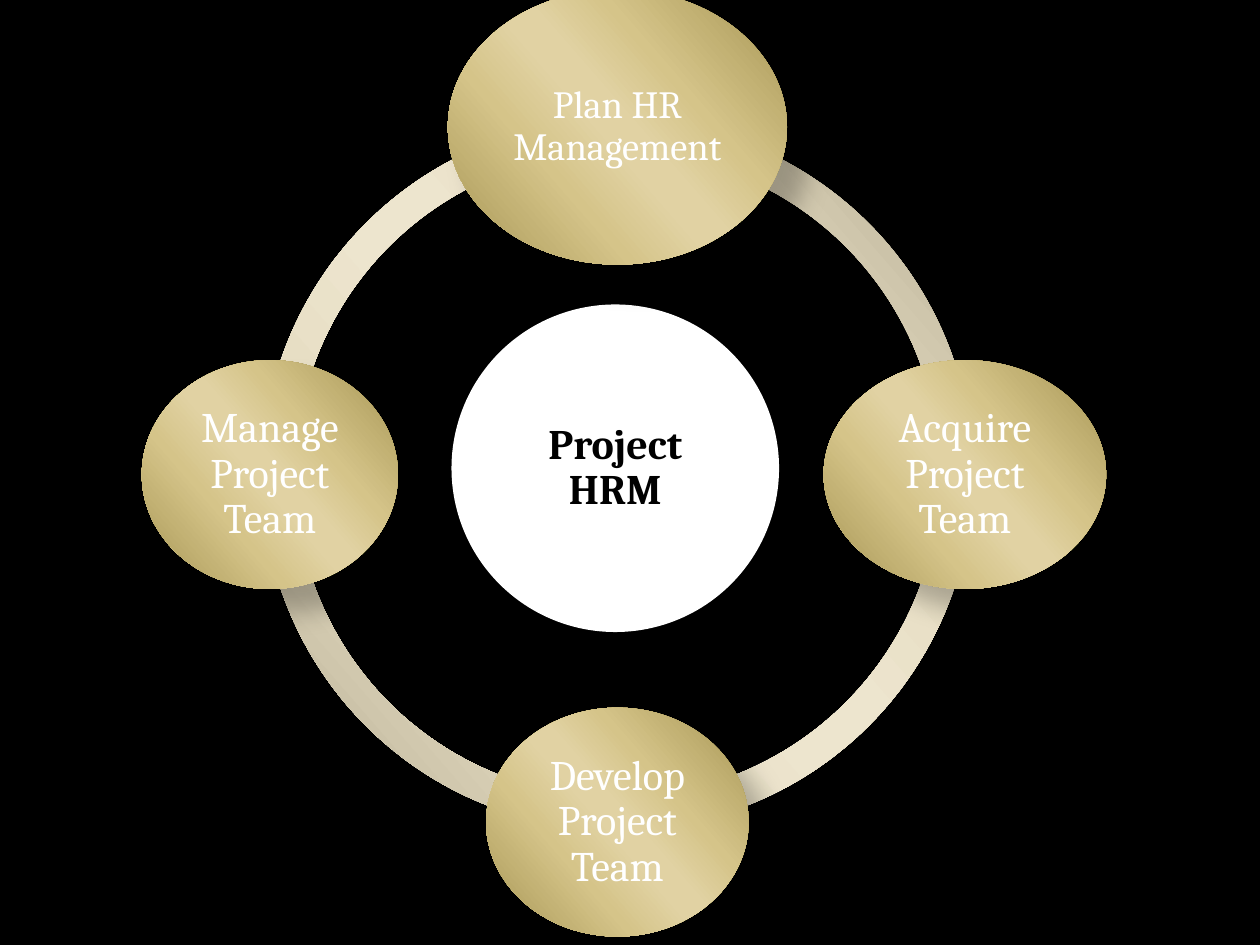
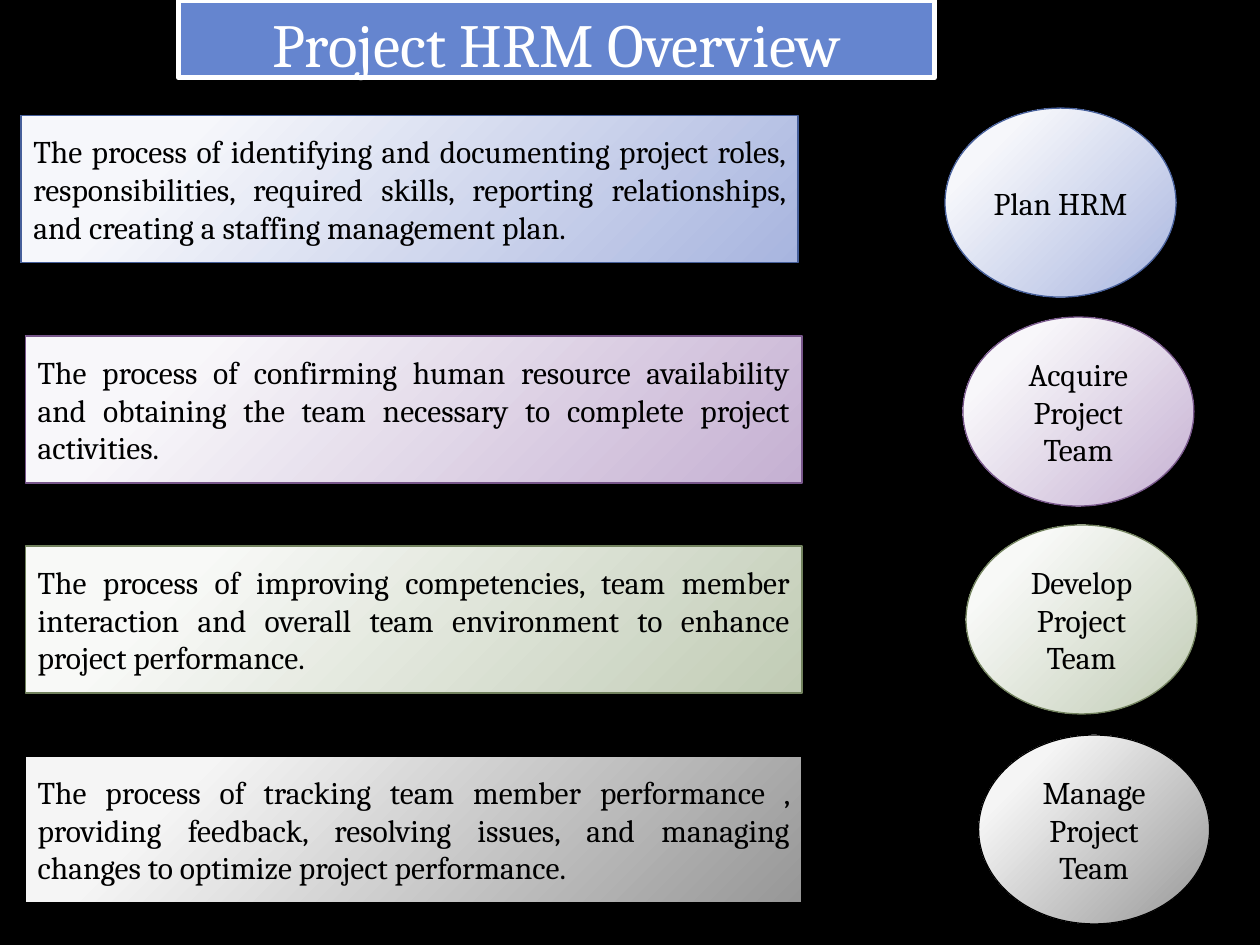
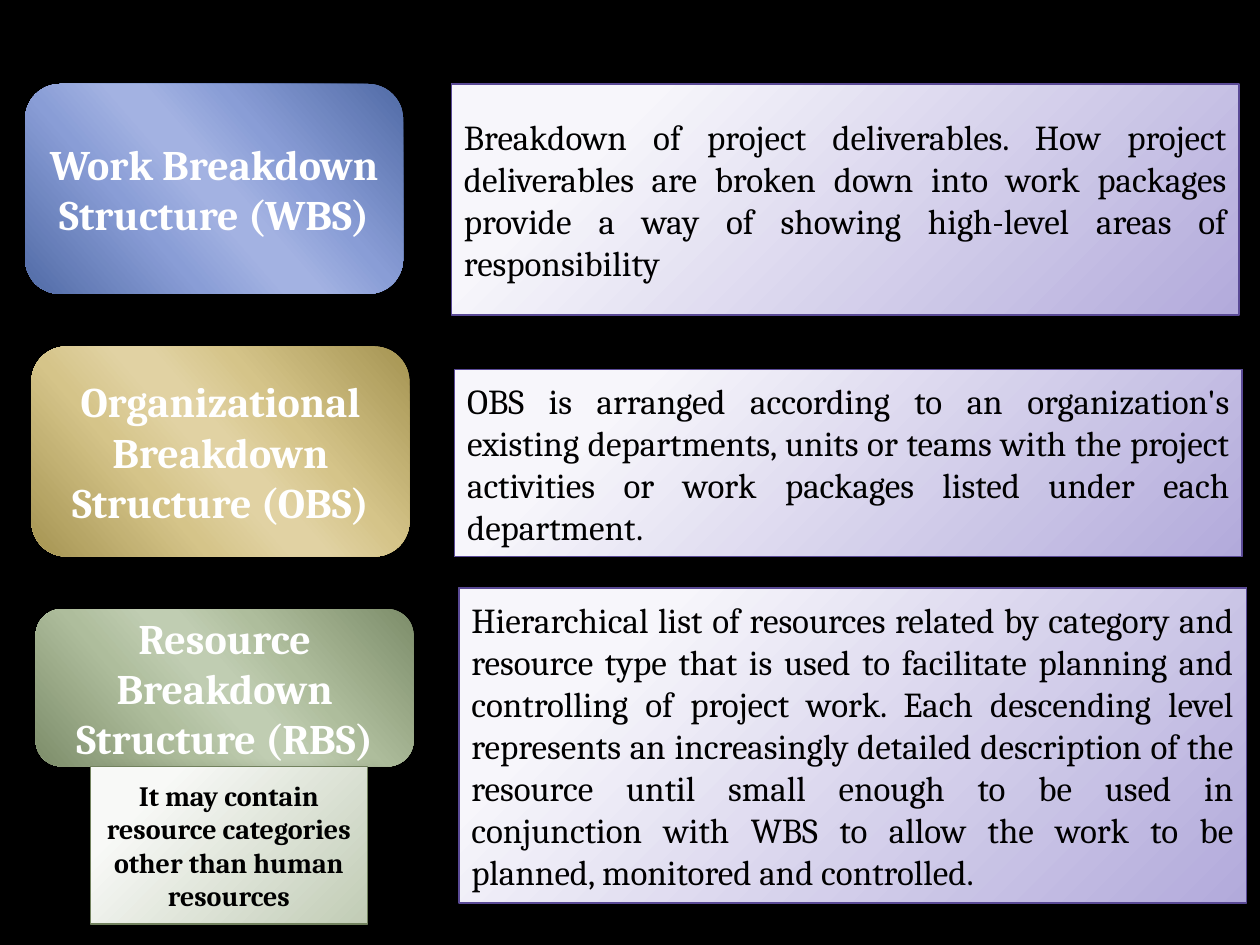
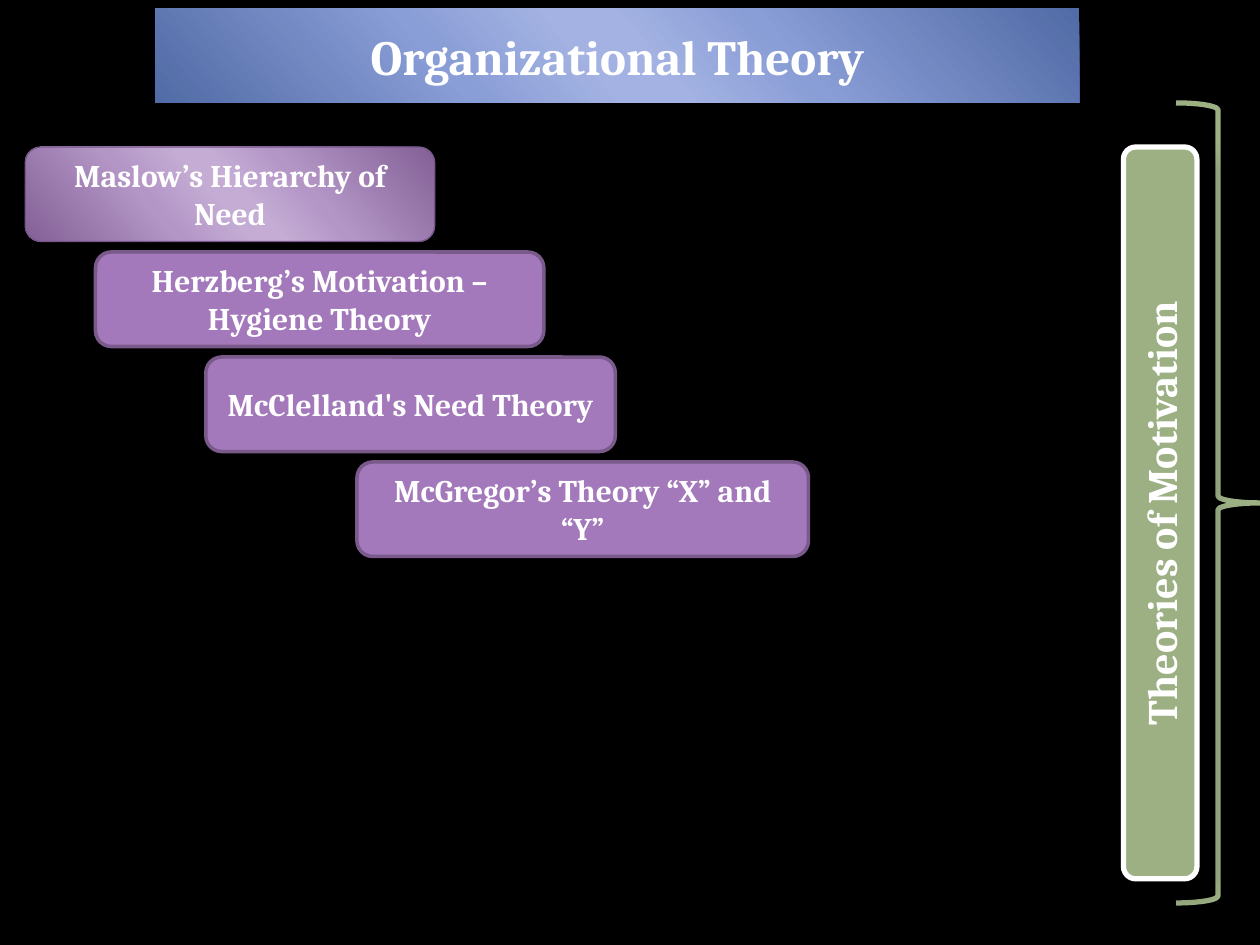
from dataclasses import dataclass
from math import cos, radians, sin, sqrt

from lxml import etree
from pptx import Presentation
from pptx import util as u
from pptx.dml import color
from pptx.enum import shapes, text
from pptx.oxml import ns

KIND = shapes.MSO_SHAPE
ALIGN = text.PP_ALIGN
ANCHOR = text.MSO_ANCHOR
COLUMNS, ROWS = 120, 90
CELL = u.Inches(10) / COLUMNS  # the grid is square


@dataclass(frozen=True)
class Sheen:
    """Diagonal band: dark edges, light centre."""
    edge: str
    middle: str
    centre: str


@dataclass(frozen=True)
class Mist:
    """Fades from the top left corner, with a thin outline."""
    light: str
    dark: str
    line: str


@dataclass(frozen=True)
class Shadow:
    alpha: float
    blur: float
    distance: float


@dataclass(frozen=True)
class Theme:
    font = "Cambria"
    ground = ink = "000000"
    paper = "FFFFFF"
    blue, purple, purple_line, green = "6585CF", "A379BB", "795A8A", "9CB084"
    gold_sheen = Sheen("A59452", "D5C489", "E1D2A3")
    ring_sheen = Sheen("B6AD93", "E7DEC4", "EDE5CE")
    blue_sheen = Sheen("516BA6", "899DD6", "A3B2E2")
    green_sheen = Sheen("7D8D6A", "AEBD9C", "C0CDB2")
    purple_sheen = Sheen("836196", "B395C6", "C4ACD4")
    blue_mist = Mist("F6F7FB", "A8B5DF", "465F9A")
    purple_mist = Mist("F8F7FA", "C5B0D2", "77568A")
    green_mist = Mist("F8F9F7", "C1CCB5", "72825E")
    grey_mist = Mist("F5F5F5", "979797", "000000")
    violet_mist = Mist("F7F6FB", "B2AADB", "5A4A96")
    deep = Shadow(26, 15, 18)
    soft = Shadow(35, 10.2, 8)
    title, banner, heading, node, body, label, note = 35, 28, 24, 22, 20, 18, 16
    hairline, border, frame = 0.75, 2, 3


THEME = Theme()


@dataclass(frozen=True)
class Box:
    """An area counted in grid columns and rows."""
    left: float
    top: float
    width: float
    height: float

    @classmethod
    def around(cls, x, y, width, height):
        return cls(x - width / 2, y - height / 2, width, height)

    def inner(self, left, top, width, height):
        return Box(self.left + left, self.top + top, width, height)

    def inscribed(self):
        share = sqrt(0.5)
        return Box.around(self.left + self.width / 2, self.top + self.height / 2,
                          self.width * share, self.height * share)

    def emu(self):
        return [round(n * CELL) for n in (self.left, self.top, self.width, self.height)]


PAGE = Box(0, 0, COLUMNS, ROWS)


# Formatting helpers
def apply(target, **values):
    for name, value in values.items():
        setattr(target, name, value)


def rgb(value):
    return color.RGBColor.from_string(value)


def node(parent, tag, **values):
    return etree.SubElement(parent, ns.qn("a:" + tag), {k: str(v) for k, v in values.items()})


def gradient(shape, fill):
    grad = node(shape._element.spPr, "gradFill", rotWithShape=1)
    if isinstance(fill, Sheen):
        stops = [(0, fill.edge), (33, fill.middle), (47, fill.centre),
                 (53, fill.centre), (68, fill.middle), (100, fill.edge)]
    else:
        stops = [(20, fill.light), (100, fill.dark)]
    stop_list = node(grad, "gsLst")
    for place, value in stops:
        node(node(stop_list, "gs", pos=place * 1000), "srgbClr", val=value)
    if isinstance(fill, Sheen):
        node(grad, "lin", ang=139 * 60000, scaled=1)
    else:
        circle = node(grad, "path", **{"path": "circle"})
        node(circle, "fillToRect", l=-15000, t=-15000, r=115000, b=115000)


def paint(shape, fill=None, line=None, weight=THEME.hairline, shadow=None):
    if isinstance(fill, (Sheen, Mist)):
        gradient(shape, fill)
    elif fill:
        shape.fill.solid()
        shape.fill.fore_color.rgb = rgb(fill)
    else:
        shape.fill.background()
    if isinstance(fill, Mist):
        line = fill.line
    if line:
        shape.line.color.rgb = rgb(line)
        shape.line.width = u.Pt(weight)
    else:
        shape.line.fill.background()
    shape.shadow.inherit = False
    if shadow:
        effects = shape._element.spPr.find(ns.qn("a:effectLst"))
        outer = node(effects, "outerShdw", blurRad=u.Pt(shadow.blur), dist=u.Pt(shadow.distance),
                     dir=45 * 60000, algn="tl", rotWithShape=0)
        node(node(outer, "srgbClr", val=THEME.ground), "alpha", val=shadow.alpha * 1000)


def write(shape, words, size, ink=THEME.paper, bold=False, align=ALIGN.CENTER,
          anchor=ANCHOR.MIDDLE, margin=None, **spacing):
    frame = shape.text_frame
    apply(frame, auto_size=text.MSO_AUTO_SIZE.NONE, word_wrap=True, vertical_anchor=anchor)
    if margin is not None:
        sides = ("left", "top", "right", "bottom")
        apply(frame, **{f"margin_{side}": u.Inches(margin) for side in sides})
    para = frame.paragraphs[0]
    apply(para, alignment=align, **spacing)
    span = para.add_run()
    span.text = words
    apply(span.font, name=THEME.font, size=u.Pt(size), bold=bold)
    span.font.color.rgb = rgb(ink)


def draw(page, kind, box, **look):
    shape = page.shapes.add_shape(kind, *box.emu())
    paint(shape, **look)
    return shape


def add_page(deck, titled=False):
    return deck.slides.add_slide(deck.slide_layouts[5 if titled else 6])


def place_title(page, box, words, size, outline, look, **style):
    title = page.shapes.title
    apply(title, **dict(zip(("left", "top", "width", "height"), box.emu())))
    node(node(title._element.spPr, "prstGeom", prst=outline), "avLst")
    paint(title, **look)
    write(title, words, size, **style)


def panel(page, box, words, size, fill):
    """Justified dark text on a pale panel."""
    shape = draw(page, KIND.RECTANGLE, box, fill=fill, shadow=THEME.soft)
    write(shape, words, size, THEME.ink, align=ALIGN.JUSTIFY)


# Slide 1: cycle of processes
def disc(page, box, words, size, fill, **style):
    draw(page, KIND.OVAL, box, fill=fill, shadow=THEME.deep)
    label = page.shapes.add_textbox(*box.inscribed().emu())
    write(label, words, size, margin=0.03, line_spacing=0.9,
          space_after=u.Pt(round(size * 0.35)), **style)


def cycle_page(deck):
    page = add_page(deck)
    x, y, ring, orbit = 58.8, 45.2, 67.7, 33.1
    quarter = 54  # adjustment units in 90 degrees
    for start in (2, 1, 0, 3):
        arc = draw(page, KIND.BLOCK_ARC, Box.around(x, y, ring, ring),
                   fill=THEME.ring_sheen, shadow=THEME.deep)
        for index, value in enumerate((start * quarter, (start + 1) % 4 * quarter, 0.046)):
            arc.adjustments[index] = value
    disc(page, Box.around(x - 0.2, y - 0.6, 31.2, 31.2), "Project HRM", THEME.heading,
         THEME.paper, ink=THEME.ink, bold=True)
    steps = [("Plan HR Management", 32.3, 26.2, THEME.node),
             ("Acquire Project Team", 26.9, 21.8, THEME.heading),
             ("Develop Project Team", 25, 21.8, THEME.heading),
             ("Manage Project Team", 24.4, 21.8, THEME.heading)]
    for index, (words, width, height, size) in enumerate(steps):
        angle = radians(index * 90 - 90)
        box = Box.around(x + orbit * cos(angle), y + orbit * sin(angle), width, height)
        disc(page, box, words, size, THEME.gold_sheen)


# Slide 2: one row for each process
def process_row(page, row, process, words, shift, fill):
    panel(page, row.inner(0, 0, 74, 14), words, THEME.label, fill)
    oval = draw(page, KIND.OVAL, row.inner(*shift, 22, 18), fill=fill, shadow=THEME.soft)
    write(oval, process, THEME.label, THEME.ink)


def overview_page(deck):
    page = add_page(deck, titled=True)
    place_title(page, PAGE.inner(17, 0, 72, 7.4), "Project HRM Overview", THEME.title, "rect",
                dict(fill=THEME.blue, line=THEME.paper, weight=THEME.frame, shadow=THEME.soft),
                anchor=ANCHOR.TOP)
    rows = [
        (2, 11, "Plan HRM",
         "The process of identifying and documenting project roles, responsibilities, required "
         "skills, reporting relationships, and creating a staffing management plan.",
         (88, -0.7), THEME.blue_mist),
        (2.4, 32, "Acquire Project Team",
         "The process of confirming human resource availability and obtaining the team "
         "necessary to complete project activities.",
         (89.3, -1.8), THEME.purple_mist),
        (2.4, 52, "Develop Project Team",
         "The process of improving competencies, team member interaction and overall team "
         "environment to enhance project performance.",
         (89.6, -2), THEME.green_mist),
        (2.4, 72, "Manage Project Team",
         "The process of tracking team member performance , providing feedback, resolving "
         "issues, and managing changes to optimize project performance.",
         (90.8, -2), THEME.grey_mist),
    ]
    for left, top, *content in rows:
        process_row(page, PAGE.inner(left, top, 112, 18), *content)


# Slide 3: breakdown structures
def structure_row(page, row, name, name_height, fill, words, shift, height):
    tile = draw(page, KIND.ROUNDED_RECTANGLE, row.inner(0, 0, 36, name_height),
                fill=fill, shadow=THEME.deep)
    write(tile, name, THEME.heading, bold=True)
    panel(page, row.inner(*shift, 75, height), words, THEME.body, THEME.violet_mist)


def structures_page(deck):
    page = add_page(deck)
    rows = [
        (2.4, 8, "Work Breakdown Structure (WBS)", 20, THEME.blue_sheen,
         "Breakdown of project deliverables. How project deliverables are broken down into "
         "work packages provide a way of showing high-level areas of responsibility",
         (40.6, 0), 22),
        (3, 33, "Organizational Breakdown Structure (OBS)", 20, THEME.gold_sheen,
         "OBS is arranged according to an organization's existing departments, units or teams "
         "with the project activities or work packages listed under each department.",
         (40.3, 2.2), 17.8),
        (3.4, 58, "Resource Breakdown Structure (RBS)", 15, THEME.green_sheen,
         "Hierarchical list of resources related by category and resource type that is used to "
         "facilitate planning and controlling of project work. Each descending level represents "
         "an increasingly detailed description of the resource until small enough to be used in "
         "conjunction with WBS to allow the work to be planned, monitored and controlled.",
         (40.3, -2), 30),
    ]
    for left, top, *content in rows:
        structure_row(page, PAGE.inner(left, top, 116, 20), *content)
    remark = draw(page, KIND.RECTANGLE, PAGE.inner(8.6, 73, 26.4, 15),
                  fill=THEME.green_mist, shadow=THEME.soft)
    write(remark, "It may contain resource categories other than human resources",
          THEME.note, THEME.ink, bold=True)


# Slide 4: staircase of theories
def theory_steps(page, area):
    flat = dict(fill=THEME.purple, line=THEME.purple_line, weight=THEME.border)
    lit = dict(fill=THEME.purple_sheen, line=THEME.purple_mist.line, shadow=THEME.deep)
    steps = [(0, 39, "Maslow’s Hierarchy of Need", lit),
             (6.7, 42.7, "Herzberg’s Motivation – Hygiene Theory", flat),
             (17.2, 39, "McClelland's Need Theory", flat),
             (31.6, 43, "McGregor’s Theory “X” and “Y”", flat)]
    for index, (left, width, words, look) in enumerate(steps):
        step = draw(page, KIND.ROUNDED_RECTANGLE, area.inner(left, index * 10, width, 9), **look)
        write(step, words, THEME.label, bold=True)


def motivation_strip(page, area):
    draw(page, KIND.RIGHT_BRACE, area.inner(5, 0, 8, 76.2), line=THEME.green,
         weight=THEME.frame, shadow=THEME.deep)
    strip = draw(page, KIND.ROUNDED_RECTANGLE, area.inner(0, 4.2, 7, 69.7), fill=THEME.green,
                 line=THEME.paper, weight=THEME.frame, shadow=THEME.soft)
    write(strip, "Theories of Motivation", THEME.heading, bold=True)
    strip.text_frame._txBody.bodyPr.set("vert", "vert270")


def theory_page(deck):
    page = add_page(deck, titled=True)
    place_title(page, PAGE.inner(14.8, 0.8, 88, 9), "Organizational Theory", THEME.banner,
                "roundRect", dict(fill=THEME.blue_sheen, shadow=THEME.deep), bold=True)
    motivation_strip(page, PAGE.inner(107, 9.8, 13, 76.2))
    theory_steps(page, PAGE.inner(2.4, 14, 75, 39))


def main():
    deck = Presentation()
    apply(deck, slide_width=round(COLUMNS * CELL), slide_height=round(ROWS * CELL))
    ground = deck.slide_master.background.fill
    ground.solid()
    ground.fore_color.rgb = rgb(THEME.ground)
    for build in (cycle_page, overview_page, structures_page, theory_page):
        build(deck)
    deck.save("out.pptx")


if __name__ == "__main__":
    main()
